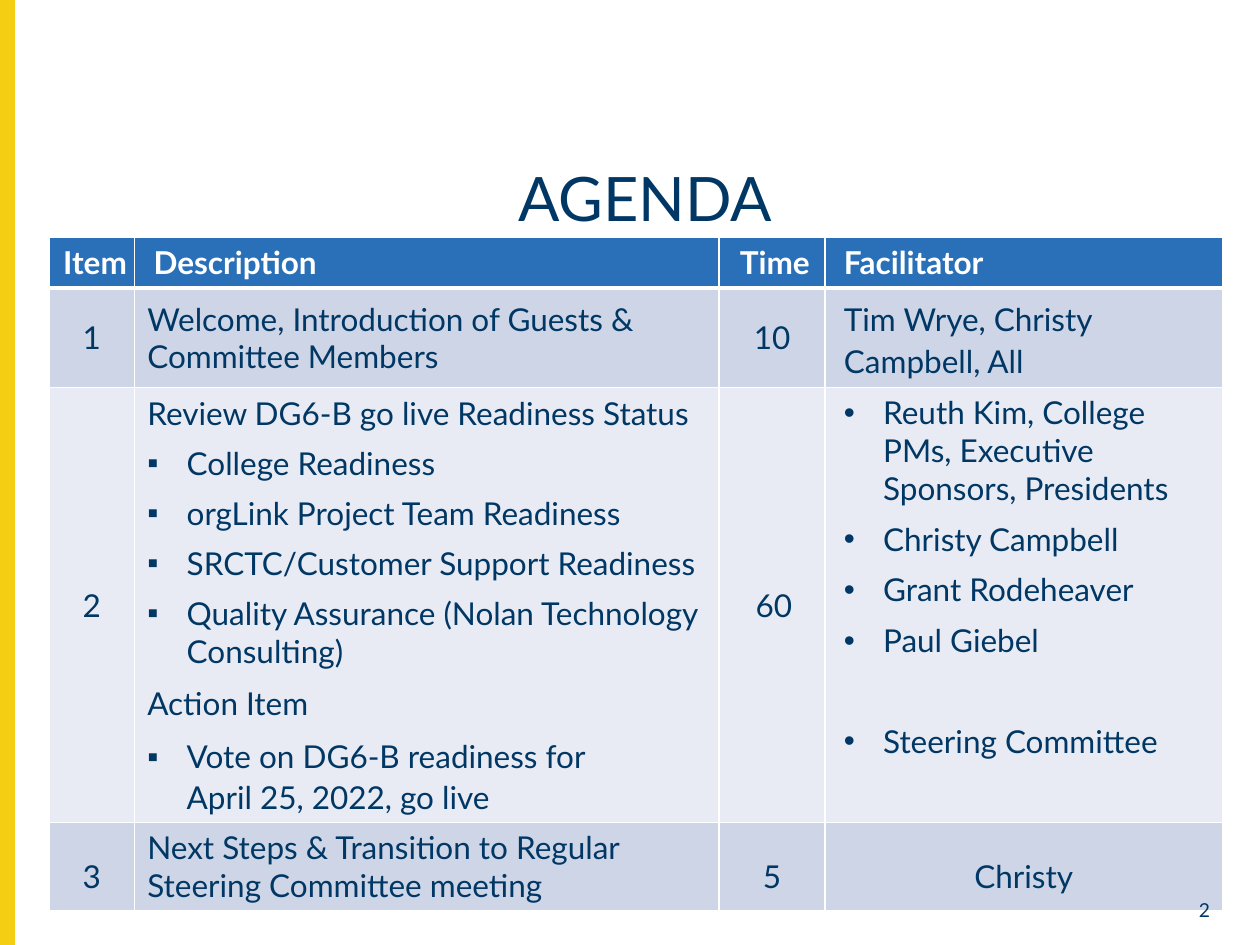
"""Build an agenda slide with a timed table of items and facilitators."""
from lxml.etree import SubElement
from pptx import Presentation
from pptx.dml.color import RGBColor
from pptx.enum.shapes import MSO_SHAPE
from pptx.enum.text import MSO_ANCHOR, PP_ALIGN
from pptx.oxml.ns import qn
from pptx.util import Pt

COLORS = {
    "navy": "003764",
    "blue": "2A70B8",
    "yellow": "F4CE12",
    "white": "FFFFFF",
    "dark_band": "CDD5E6",
    "light_band": "E8EBF3",
}
CENTER = {"align": PP_ALIGN.CENTER}
INDENTED = {"left": 3.6}
TALL = {"align": PP_ALIGN.CENTER, "line_spacing": 1.5}
SQUARE = {"bullet": "▪", "left": 22.5, "before": 7}
ROUND = {"bullet": "•", "left": 26, "before": 7.3}

COLUMN_WIDTHS = [49, 334, 60.5, 227]
ROW_HEIGHTS = [29, 57, 240.5, 49]
ROW_FILLS = ["blue", "dark_band", "light_band", "dark_band"]
AGENDA = [
    [
        [("Item", {**CENTER, **INDENTED})],
        [("Description", INDENTED)],
        [("Time", {**CENTER, "left": 3})],
        [("Facilitator", INDENTED)],
    ],
    [
        [("1", CENTER)],
        [("Welcome, Introduction of Guests & Committee Members", {})],
        [("10", CENTER)],
        [("Tim Wrye, Christy Campbell, All", {**INDENTED, "line_spacing": 1.12})],
    ],
    [
        [("2", CENTER)],
        [
            ("Review DG6-B go live Readiness Status", {}),
            ("College Readiness", SQUARE),
            ("orgLink Project Team Readiness", SQUARE),
            ("SRCTC/Customer Support Readiness", SQUARE),
            ("Quality Assurance (Nolan Technology Consulting)", SQUARE),
            ("Action Item", {"before": 6.8, "line_spacing": 1.08}),
            ("Vote on DG6-B readiness for\vApril 25, 2022, go live",
             {**SQUARE, "line_spacing": 1.08}),
        ],
        [("60", {**CENTER, "left": 2})],
        [
            ("Reuth Kim, College PMs, Executive Sponsors, Presidents", ROUND),
            ("Christy Campbell", ROUND),
            ("Grant Rodeheaver", ROUND),
            ("Paul Giebel", ROUND),
            ("Steering Committee", {**ROUND, "before": 36}),
        ],
    ],
    [
        [("3", TALL)],
        [("Next Steps & Transition to Regular Steering Committee meeting", {})],
        [("5", TALL)],
        [("Christy", TALL)],
    ],
]


class SlideBuilder:
    """Holds the text style and the current slide."""

    def __init__(self, slide, font_name="Lato", body_size=18):
        self.slide = slide
        self.font_name = font_name
        self.body_size = body_size

    def color(self, name):
        return RGBColor.from_string(COLORS[name])

    def fill_paragraph(self, paragraph, text, size=None, color="navy", bold=False,
                       align=PP_ALIGN.LEFT, left=0, before=0, line_spacing=1,
                       bullet=None):
        paragraph.text = text
        paragraph.alignment = align
        paragraph.space_before = Pt(before)
        paragraph.line_spacing = line_spacing
        properties = paragraph._p.get_or_add_pPr()
        properties.set("marL", str(Pt(left)))
        properties.set("indent", str(-Pt(22.5) if bullet else 0))
        if bullet:
            SubElement(properties, qn("a:buFont"), typeface="Arial")
            SubElement(properties, qn("a:buChar"), char=bullet)
        font = paragraph.font
        font.name = self.font_name
        font.size = Pt(size or self.body_size)
        font.bold = bold
        font.color.rgb = self.color(color)

    def bar(self, left, top, width, height, color):
        shape = self.slide.shapes.add_shape(
            MSO_SHAPE.RECTANGLE, Pt(left), Pt(top), Pt(width), Pt(height))
        shape.shadow.inherit = False
        shape.fill.solid()
        shape.fill.fore_color.rgb = self.color(color)
        shape.line.color.rgb = self.color(color)
        shape.line.width = Pt(1)

    def title(self, text, left, top, width, height, size):
        shape = self.slide.shapes.title
        shape.left, shape.top = Pt(left), Pt(top)
        shape.width, shape.height = Pt(width), Pt(height)
        frame = shape.text_frame
        frame.margin_top = frame.margin_bottom = 0
        frame.vertical_anchor = MSO_ANCHOR.MIDDLE
        self.fill_paragraph(frame.paragraphs[0], text, size, line_spacing=0.9, **CENTER)

    def text(self, text, left, top, width, height, size, align):
        box = self.slide.shapes.add_textbox(Pt(left), Pt(top), Pt(width), Pt(height))
        frame = box.text_frame
        frame.word_wrap = True
        frame.vertical_anchor = MSO_ANCHOR.MIDDLE
        self.fill_paragraph(frame.paragraphs[0], text, size, align=align)

    def border(self, cell, side, width):
        line = SubElement(cell._tc.get_or_add_tcPr(), qn(f"a:{side}"), w=str(Pt(width)))
        fill = SubElement(line, qn("a:solidFill"))
        SubElement(fill, qn("a:srgbClr"), val=COLORS["white"])

    def cell(self, cell, paragraphs, fill, is_header, is_number):
        top_anchored = len(paragraphs) > 1 and paragraphs[0][1] is ROUND
        cell.vertical_anchor = MSO_ANCHOR.TOP if top_anchored else MSO_ANCHOR.MIDDLE
        if is_number:
            cell.margin_left = cell.margin_right = 0
            cell.margin_top = cell.margin_bottom = 0
        for side in ("lnL", "lnR", "lnT", "lnB"):
            self.border(cell, side, 3 if is_header and side == "lnB" else 1)
        cell.fill.solid()
        cell.fill.fore_color.rgb = self.color(fill)
        frame = cell.text_frame
        for index, (text, style) in enumerate(paragraphs):
            paragraph = frame.add_paragraph() if index else frame.paragraphs[0]
            self.fill_paragraph(paragraph, text, color="white" if is_header else "navy",
                                bold=is_header, **style)

    def table(self, rows, left, top, widths, heights, fills):
        table = self.slide.shapes.add_table(
            len(rows), len(widths), Pt(left), Pt(top),
            Pt(sum(widths)), Pt(sum(heights))).table
        for column, width in zip(table.columns, widths):
            column.width = Pt(width)
        for row_index, (row, height) in enumerate(zip(rows, heights)):
            table.rows[row_index].height = Pt(height)
            for column_index, paragraphs in enumerate(row):
                self.cell(table.cell(row_index, column_index), paragraphs,
                          fills[row_index], row_index == 0, column_index == 0)


def main():
    presentation = Presentation()
    presentation.slide_width, presentation.slide_height = Pt(720), Pt(540)
    builder = SlideBuilder(presentation.slides.add_slide(presentation.slide_layouts[5]))
    builder.bar(0, 0, 8, 540, "yellow")
    builder.title("AGENDA", 49, 95, 639.5, 41, 35)
    builder.table(AGENDA, 28, 135.5, COLUMN_WIDTHS, ROW_HEIGHTS, ROW_FILLS)
    builder.text("2", 661.5, 510.5, 37, 19, 11, PP_ALIGN.RIGHT)
    presentation.save("out.pptx")


if __name__ == "__main__":
    main()
